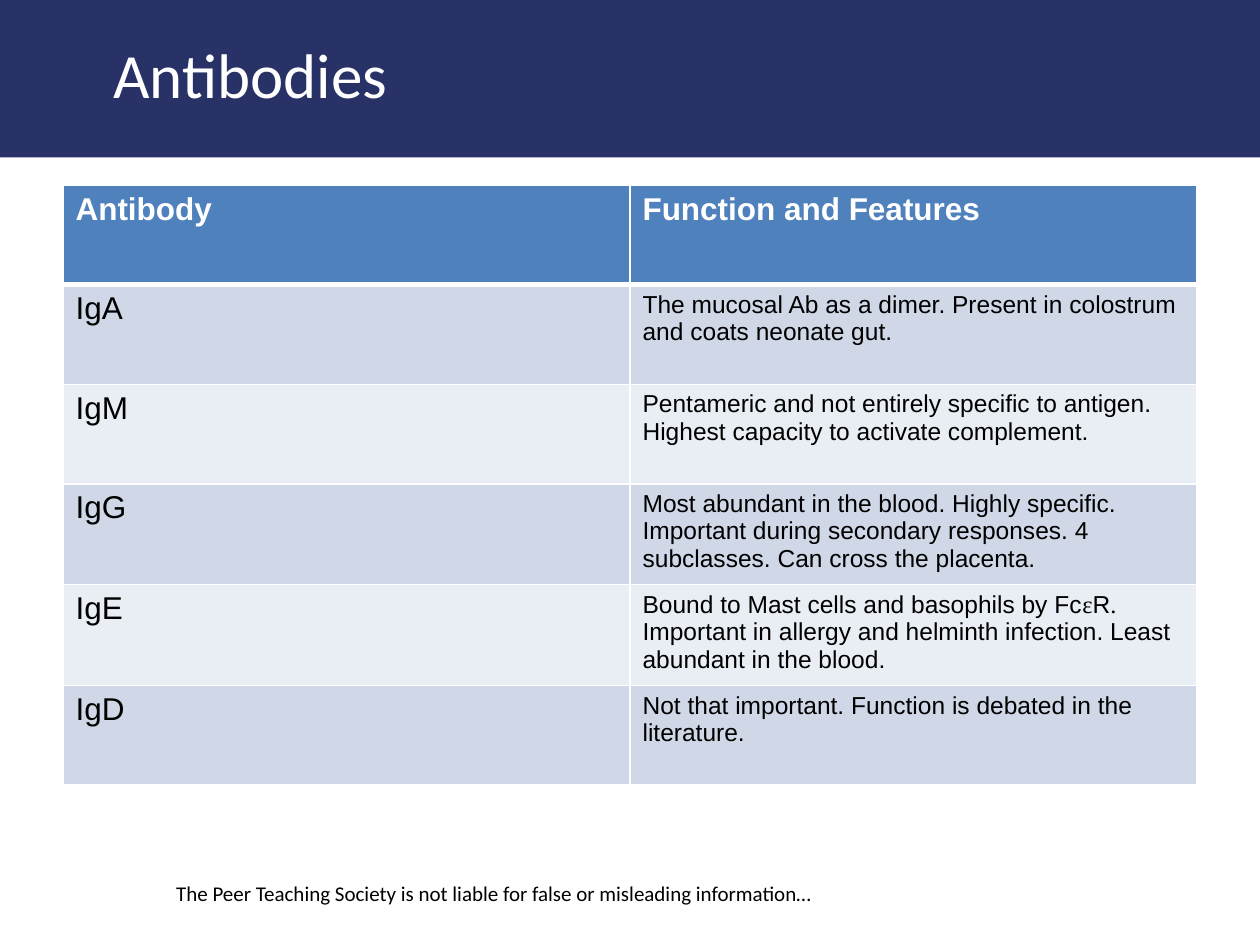
from lxml import etree
from pptx import Presentation
from pptx.dml.color import RGBColor
from pptx.enum import shapes, text
from pptx.oxml import ns
from pptx.util import Inches, Pt

COLORS = {
    "banner": "293267",
    "header": "4F81BD",
    "odd": "D0D8E8",
    "even": "E9EDF4",
    "white": "FFFFFF",
    "black": "000000",
}
ANTIBODIES = [
    ("IgA", ["The mucosal Ab as a dimer. Present in colostrum and coats neonate gut."]),
    ("IgM", ["Pentameric and not entirely specific to antigen. "
             "Highest capacity to activate complement."]),
    ("IgG", ["Most abundant in the blood. Highly specific. Important during "
             "secondary responses. 4 subclasses. Can cross the placenta."]),
    ("IgE", ["Bound to Mast cells and basophils by Fc", ("ε", "Times New Roman"), "R",
             (". ", "Times New Roman"),
             "Important in allergy and helminth infection. Least abundant in the blood."]),
    ("IgD", ["Not that important. Function is debated in the literature."]),
]


def rgb(name):
    """Return the named colour."""
    return RGBColor.from_string(COLORS[name])


def add_run(paragraph, words, size, font, color, bold=False):
    """Append one formatted run to a paragraph."""
    run = paragraph.add_run()
    run.text = words
    run.font.size = Pt(size)
    run.font.name = font
    run.font.bold = bold
    run.font.color.rgb = rgb(color)


def add_banner(slide):
    """Draw the band behind the title."""
    banner = slide.shapes.add_shape(
        shapes.MSO_SHAPE.RECTANGLE, 0, 0, Inches(10), Inches(1.25))
    banner.shadow.inherit = False
    banner.fill.solid()
    banner.fill.fore_color.rgb = rgb("banner")
    banner.line.fill.background()
    slide.shapes.title._element.addprevious(banner._element)


def set_title(slide, words):
    """Place and format the title placeholder."""
    title = slide.shapes.title
    title.left, title.top = Inches(0.8), Inches(0.23)
    title.width, title.height = Inches(5.11), Inches(0.71)
    frame = title.text_frame
    frame.word_wrap = True
    frame.auto_size = text.MSO_AUTO_SIZE.SHAPE_TO_FIT_TEXT
    frame.vertical_anchor = text.MSO_ANCHOR.TOP
    paragraph = frame.paragraphs[0]
    paragraph.alignment = text.PP_ALIGN.LEFT
    add_run(paragraph, words, 36, "Calibri", "white")


def add_disclaimer(slide, words):
    """Add the disclaimer at the foot of the slide."""
    disclaimer = slide.shapes.add_textbox(
        Inches(1.3), Inches(6.94), Inches(5.54), Inches(0.3))
    disclaimer.text_frame.word_wrap = True
    add_run(disclaimer.text_frame.paragraphs[0], words, 12, "Calibri", "black")


def set_borders(cell, bottom, top):
    """Give a cell white borders, with widths in points."""
    properties = cell._tc.get_or_add_tcPr()
    widths = {"a:lnL": 1, "a:lnR": 1, "a:lnT": top, "a:lnB": bottom}
    for index, (side, width) in enumerate(widths.items()):
        border = etree.Element(ns.qn(side), w=str(Pt(width)))
        fill = etree.SubElement(border, ns.qn("a:solidFill"))
        etree.SubElement(fill, ns.qn("a:srgbClr"), val=COLORS["white"])
        properties.insert(index, border)


def fill_cell(cell, runs, size, color, fill, bold=False):
    """Write runs into a cell and set its fill."""
    for run in runs:
        words, font = (run, "Arial") if isinstance(run, str) else run
        add_run(cell.text_frame.paragraphs[0], words, size, font, color, bold)
    cell.fill.solid()
    cell.fill.fore_color.rgb = rgb(fill)


def add_antibody_table(slide):
    """Add the table of antibodies and their functions."""
    row_count = len(ANTIBODIES) + 1
    table = slide.shapes.add_table(
        row_count, 2, Inches(0.5), Inches(1.47),
        Inches(9), Inches(0.79) * row_count).table
    for column, heading in enumerate(("Antibody", "Function and Features")):
        fill_cell(table.cell(0, column), [heading], 18, "white", "header", bold=True)
        set_borders(table.cell(0, column), bottom=3, top=1)
    for row, (antibody, function) in enumerate(ANTIBODIES, start=1):
        band = "odd" if row % 2 else "even"
        fill_cell(table.cell(row, 0), [antibody], 18, "black", band)
        fill_cell(table.cell(row, 1), function, 14, "black", band)
        for column in range(2):
            set_borders(table.cell(row, column), bottom=1, top=3 if row == 1 else 1)


def main():
    """Build and save the slide."""
    deck = Presentation()
    deck.slide_width, deck.slide_height = Inches(10), Inches(7.5)
    slide = deck.slides.add_slide(deck.slide_layouts[5])
    add_banner(slide)
    set_title(slide, "Antibodies")
    add_antibody_table(slide)
    add_disclaimer(
        slide, "The Peer Teaching Society is not liable for false or misleading information…")
    deck.save("out.pptx")


if __name__ == "__main__":
    main()
